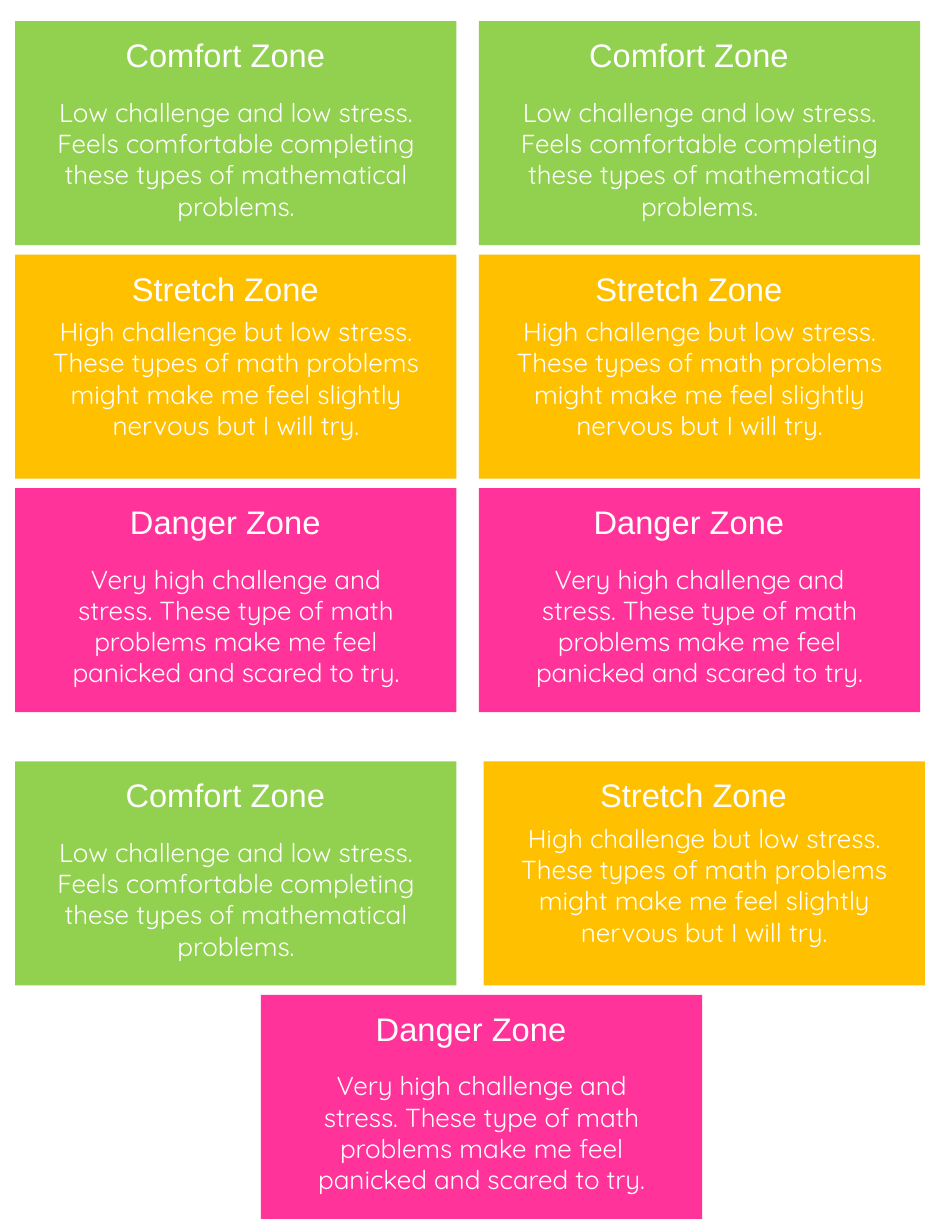
from dataclasses import dataclass

from pptx import Presentation
from pptx.dml.color import RGBColor
from pptx.enum.shapes import MSO_SHAPE as Shape
from pptx.enum.text import MSO_AUTO_SIZE as AutoSize, PP_ALIGN as Align
from pptx.util import Inches, Pt


@dataclass(frozen=True)
class Theme:
    green: str = "92D050"
    amber: str = "FFC000"
    pink: str = "FF3399"
    text: str = "FFFFFF"
    title_font: str = "Arial"
    title_size: int = 20
    body_font: str = "Quicksand"
    body_size: int = 16


@dataclass(frozen=True)
class Zone:
    title: str
    description: str
    color: str
    body_top: float  # below the card's top edge
    body_height: float


@dataclass(frozen=True)
class Grid:
    left: float = 0.13
    top: float = 0.18
    column_step: float = 3.95
    row_step: float = 1.99
    card_width: float = 3.76
    card_height: float = 1.91

    def corner(self, column, row):
        return self.left + column * self.column_step, self.top + row * self.row_step


class CardSheet:
    def __init__(self, slide, theme, grid):
        self.slide, self.theme, self.grid = slide, theme, grid

    def panel(self, left, top, color):
        panel = self.slide.shapes.add_shape(
            Shape.RECTANGLE, Inches(left), Inches(top),
            Inches(self.grid.card_width), Inches(self.grid.card_height))
        panel.shadow.inherit = False
        panel.fill.solid()
        panel.fill.fore_color.rgb = RGBColor.from_string(color)
        panel.line.fill.background()

    def label(self, left, top, width, height, words, font, size):
        box = self.slide.shapes.add_textbox(
            Inches(left), Inches(top), Inches(width), Inches(height))
        frame = box.text_frame
        frame.word_wrap = True
        frame.auto_size = AutoSize.SHAPE_TO_FIT_TEXT
        paragraph = frame.paragraphs[0]
        paragraph.alignment = Align.CENTER
        run = paragraph.add_run()
        run.text = words
        run.font.name = font
        run.font.size = Pt(size)
        run.font.color.rgb = RGBColor.from_string(self.theme.text)

    def card(self, column, row, zone):
        theme = self.theme
        left, top = self.grid.corner(column, row)
        self.panel(left, top, zone.color)
        self.label(left + 0.4, top + 0.07, 2.78, 0.44,
                   zone.title, theme.title_font, theme.title_size)
        self.label(left + 0.22, top + zone.body_top, 3.32, zone.body_height,
                   zone.description, theme.body_font, theme.body_size)


def main():
    theme = Theme()
    comfort = Zone(
        "Comfort Zone",
        "Low challenge and low stress. Feels comfortable completing "
        "these types of mathematical problems.",
        theme.green, 0.59, 1.18)
    stretch = Zone(
        "Stretch Zone",
        "High challenge but low stress. These types of math problems "
        "might make me feel slightly nervous but I will try.",
        theme.amber, 0.47, 1.45)
    danger = Zone(
        "Danger Zone",
        "Very high challenge and stress. These type of math problems "
        "make me feel panicked and scared to try.",
        theme.pink, 0.59, 1.18)

    deck = Presentation()
    deck.slide_width, deck.slide_height = Inches(8), Inches(10.5)
    sheet = CardSheet(deck.slides.add_slide(deck.slide_layouts[6]), theme, Grid())

    # Two full sets, one per column
    for column in range(2):
        for row, zone in enumerate((comfort, stretch, danger)):
            sheet.card(column, row, zone)

    # Third set: a pair with the last card centred below
    sheet.card(0, 3.17, comfort)
    sheet.card(1.01, 3.17, stretch)
    sheet.card(0.53, 4.17, danger)

    deck.save("out.pptx")


if __name__ == "__main__":
    main()
